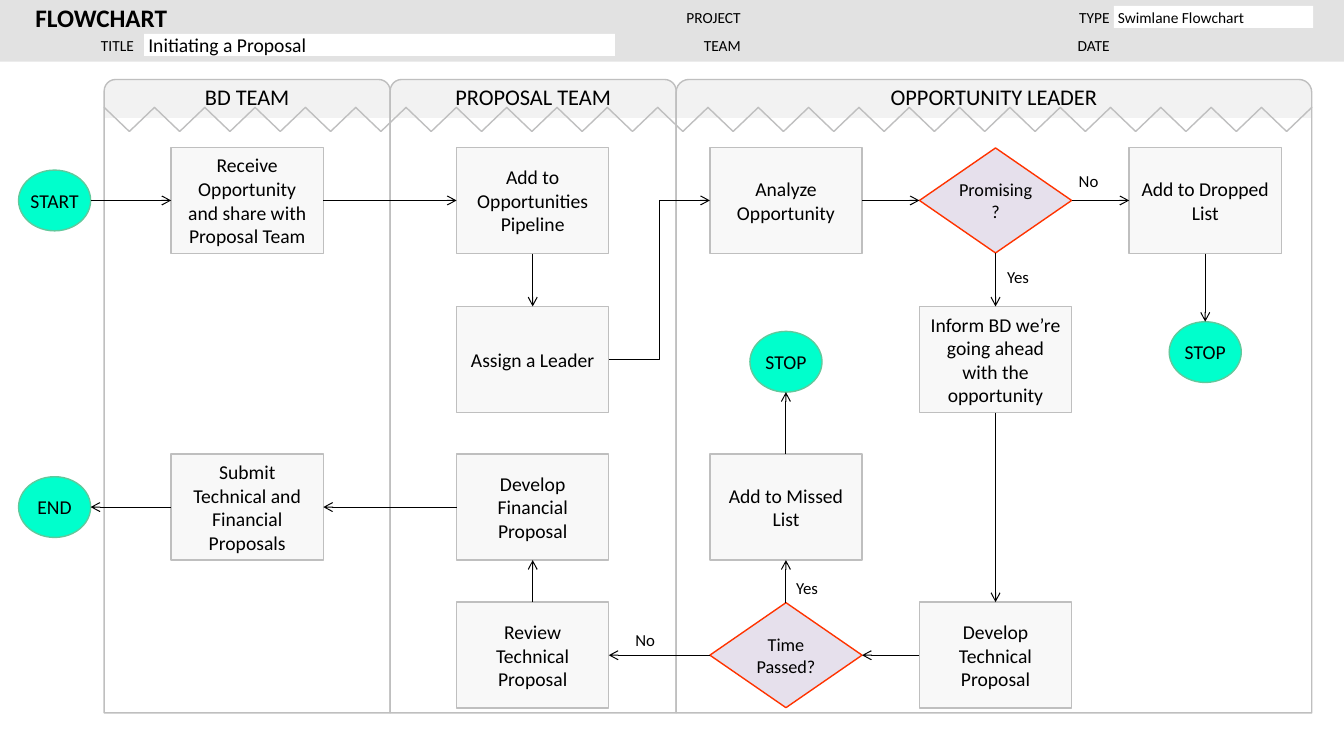
import pptx
import pptx.util
import pptx.dml.color
import pptx.enum.shapes
import pptx.enum.text
import pptx.oxml.ns
import lxml.etree

Pt = pptx.util.Pt
SHAPE = pptx.enum.shapes.MSO_SHAPE
CONNECTOR = pptx.enum.shapes.MSO_CONNECTOR
ALIGN = pptx.enum.text.PP_ALIGN
ANCHOR = pptx.enum.text.MSO_ANCHOR
qn = pptx.oxml.ns.qn

THEME = {
    "font": "Calibri", "text": "000000", "band": "E2E2E2", "field": "FFFFFF",
    "lane": "FFFFFF", "lane_head": "F2F2F2", "grey": "BFBFBF", "zigzag": "99CCFF",
    "title": 18, "lane_size": 16, "field_size": 14, "small": 11, "label": 12,
}
KINDS = {
    "step": dict(shape=SHAPE.RECTANGLE, size=(108.7, 75.8), fill="F8F8F8", line="BFBFBF",
                 font=14, margins=(7.2, 3.6)),
    "choice": dict(shape=SHAPE.DIAMOND, size=(108.7, 75), fill="E6E0EC", line="FF3300",
                   font=13, margins=(0, 2.9)),
    "end": dict(shape=SHAPE.OVAL, size=(51.5, 43.4), fill="00FFCC", line="60C99C",
                font=14, margins=(0, 0)),
}

TITLE = ("FLOWCHART", (22.3, 0, 416.9, 24.5))
FIELDS = [
    ("Initiating a Proposal", (103, 24.2, 336.2, 15.8), THEME["field_size"]),
    ("Swimlane Flowchart", (795.6, 4.2, 142.4, 15.8), THEME["small"]),
]
HEADINGS = [
    ("TITLE", (10.8, 24, 87.8, 16.6)),
    ("PROJECT", (450, 4, 82.1, 16.6)),
    ("TEAM", (450, 24, 82.1, 16.6)),
    ("TYPE", (737.3, 4, 58.3, 16.6)),
    ("DATE", (737.3, 24, 58.3, 16.6)),
]
LANES = [("BD TEAM", 204.3, 0.04), ("PROPOSAL TEAM", 204.3, 0.04), ("OPPORTUNITY LEADER", 454, 0.02)]
LANE_LEFT, LANE_TOP, LANE_HEIGHT = 74.4, 56.8, 452.4
ZIGZAGS, ZIGZAG_TOP, ZIGZAG_DEPTH = 24, 76.7, 17.2

COLUMNS = {"edge": 39, "bd": 176.6, "proposal": 380.5, "analyze": 561.4, "decide": 711.1, "drop": 860.9}
ROWS = {"top": 143.2, "second": 256.8, "third": 362.2, "bottom": 468, "dropped": 251.5, "missed": 258.4}
NODES = {
    "start": ("end", "edge", "top", "START"),
    "receive": ("step", "bd", "top", "Receive Opportunity and share with Proposal Team"),
    "pipeline": ("step", "proposal", "top", "Add to Opportunities Pipeline"),
    "assign": ("step", "proposal", "second", "Assign a Leader"),
    "analyze": ("step", "analyze", "top", "Analyze Opportunity"),
    "promising": ("choice", "decide", "top", "Promising?"),
    "dropped": ("step", "drop", "top", "Add to Dropped List"),
    "dropped_stop": ("end", "drop", "dropped", "STOP"),
    "inform": ("step", "decide", "second", "Inform BD we’re going ahead with the opportunity"),
    "technical": ("step", "decide", "bottom", "Develop Technical Proposal"),
    "passed": ("choice", "analyze", "bottom", "Time Passed?"),
    "missed": ("step", "analyze", "third", "Add to Missed List"),
    "missed_stop": ("end", "analyze", "missed", "STOP"),
    "review": ("step", "proposal", "bottom", "Review Technical Proposal"),
    "financial": ("step", "proposal", "third", "Develop Financial Proposal"),
    "submit": ("step", "bd", "third", "Submit Technical and Financial Proposals"),
    "end": ("end", "edge", "third", "END"),
}
TOP, LEFT, BOTTOM, RIGHT = range(4)
LINKS = [
    ("start", RIGHT, "receive", LEFT),
    ("receive", RIGHT, "pipeline", LEFT),
    ("pipeline", BOTTOM, "assign", TOP),
    ("assign", RIGHT, "analyze", LEFT),
    ("analyze", RIGHT, "promising", LEFT),
    ("promising", RIGHT, "dropped", LEFT),
    ("promising", BOTTOM, "inform", TOP),
    ("dropped", BOTTOM, "dropped_stop", TOP),
    ("inform", BOTTOM, "technical", TOP),
    ("technical", LEFT, "passed", RIGHT),
    ("passed", TOP, "missed", BOTTOM),
    ("missed", TOP, "missed_stop", BOTTOM),
    ("passed", LEFT, "review", RIGHT),
    ("review", TOP, "financial", BOTTOM),
    ("financial", LEFT, "submit", RIGHT),
    ("submit", LEFT, "end", RIGHT),
]
ANSWERS = [("No", 762.5, 121.9), ("Yes", 712.1, 190.6), ("Yes", 561.4, 412.6), ("No", 445.8, 450.1)]


def rgb(value):
    return pptx.dml.color.RGBColor.from_string(value)


def box(pts):
    return [Pt(v) for v in pts]


def assign(obj, values):
    for name, value in values.items():
        setattr(obj, name, value)


def write(sp, text, size, align=ALIGN.CENTER, anchor=ANCHOR.MIDDLE, margins=(2.9, 2.9), bold=False):
    tf = sp.text_frame
    side, end = box(margins)
    assign(tf, dict(word_wrap=True, auto_size=pptx.enum.text.MSO_AUTO_SIZE.NONE, vertical_anchor=anchor,
                    margin_left=side, margin_right=side, margin_top=end, margin_bottom=end))
    p = tf.paragraphs[0]
    assign(p, dict(alignment=align, space_before=Pt(0)))
    r = p.add_run()
    r.text = text
    assign(r.font, dict(name=THEME["font"], size=Pt(size), bold=bold))
    r.font.color.rgb = rgb(THEME["text"])
    return p


def paint(sp, fill, line=None):
    sp.fill.solid()
    sp.fill.fore_color.rgb = rgb(fill)
    outline(sp, line)


def outline(sp, line):
    if line:
        sp.line.color.rgb = rgb(line)
        sp.line.width = Pt(1)
    else:
        sp.line.fill.background()


def add(s, kind, pts):
    sp = s.shapes.add_shape(kind, *box(pts))
    sp.shadow.inherit = False
    return sp


def place(sp, pts):
    assign(sp, dict(zip(("left", "top", "width", "height"), box(pts))))


def add_header(s):
    band = add(s, SHAPE.RECTANGLE, (0, 0, 960, 44))
    paint(band, THEME["band"])
    s.shapes._spTree.insert(2, band._element)
    title, *bodies = s.placeholders
    place(title, TITLE[1])
    write(title, TITLE[0], THEME["title"], ALIGN.LEFT, bold=True)
    for sp, (text, pts, size) in zip(bodies, FIELDS):
        place(sp, pts)
        paint(sp, THEME["field"])
        pPr = write(sp, text, size, ALIGN.LEFT)._p.get_or_add_pPr()
        pPr.set("marL", "0")
        pPr.set("indent", "0")
        lxml.etree.SubElement(pPr, qn("a:buNone"))
    for text, pts in HEADINGS:
        write(s.shapes.add_textbox(*box(pts)), text, THEME["small"], ALIGN.RIGHT)


def add_lanes(s):
    x = LANE_LEFT
    for text, width, corner in LANES:
        sp = add(s, SHAPE.ROUND_2_SAME_RECTANGLE, (x, LANE_TOP, width, LANE_HEIGHT))
        sp.adjustments[0] = corner
        sp.fill.gradient()
        sp.fill.gradient_angle = 90
        stops = sp._element.spPr.find(qn("a:gradFill")).find(qn("a:gsLst"))
        stops.clear()
        for pos, colour in ((0, "lane"), (94, "lane"), (94, "lane_head"), (100, "lane_head")):
            stop = lxml.etree.SubElement(stops, qn("a:gs"), pos=str(pos * 1000))
            lxml.etree.SubElement(stop, qn("a:srgbClr"), val=THEME[colour])
        outline(sp, THEME["grey"])
        write(sp, text, THEME["lane_size"], anchor=ANCHOR.TOP, margins=(2.9, 0))
        x += width
    pitch = (x - LANE_LEFT) / ZIGZAGS
    for i in range(ZIGZAGS):
        left = LANE_LEFT + i * pitch + (pitch - ZIGZAG_DEPTH) / 2
        top = ZIGZAG_TOP + (ZIGZAG_DEPTH - pitch) / 2
        sp = add(s, SHAPE.CHEVRON, (left, top, ZIGZAG_DEPTH, pitch))
        sp.adjustments[0] = 1
        sp.rotation = 90
        paint(sp, THEME["zigzag"], THEME["grey"])


def add_node(s, kind, column, row, text):
    look = KINDS[kind]
    w, h = look["size"]
    sp = add(s, look["shape"], (COLUMNS[column] - w / 2, ROWS[row] - h / 2, w, h))
    paint(sp, look["fill"], look["line"])
    write(sp, text, look["font"], margins=look["margins"])
    return sp


def side_point(sp, side):
    dx, dy = ((1, 0), (0, 1), (1, 2), (2, 1))[side]
    return sp.left + sp.width * dx // 2, sp.top + sp.height * dy // 2


def add_link(s, nodes, source, out, target, into):
    a, b = nodes[source], nodes[target]
    bent = out in (LEFT, RIGHT) and NODES[source][2] != NODES[target][2]
    kind = CONNECTOR.ELBOW if bent else CONNECTOR.STRAIGHT
    c = s.shapes.add_connector(kind, *side_point(a, out), *side_point(b, into))
    if NODES[source][0] != "end":
        c.begin_connect(a, out)
    if NODES[target][0] != "end":
        c.end_connect(b, into)
    c.line.color.rgb = rgb(THEME["text"])
    c.line.width = Pt(0.75)
    lxml.etree.SubElement(c.line._get_or_add_ln(), qn("a:tailEnd"), type="arrow")
    lxml.etree.SubElement(c._element.spPr, qn("a:effectLst"))


def main():
    prs = pptx.Presentation()
    prs.slide_width, prs.slide_height = Pt(960), Pt(540)
    s = prs.slides.add_slide(prs.slide_layouts[3])
    add_header(s)
    add_lanes(s)
    nodes = {name: add_node(s, *node) for name, node in NODES.items()}
    for link in LINKS:
        add_link(s, nodes, *link)
    for text, x, y in ANSWERS:
        write(s.shapes.add_textbox(*box((x, y, 30.2, 14.4))), text, THEME["label"],
              anchor=ANCHOR.TOP, margins=(0, 0))
    prs.save("out.pptx")


if __name__ == "__main__":
    main()
